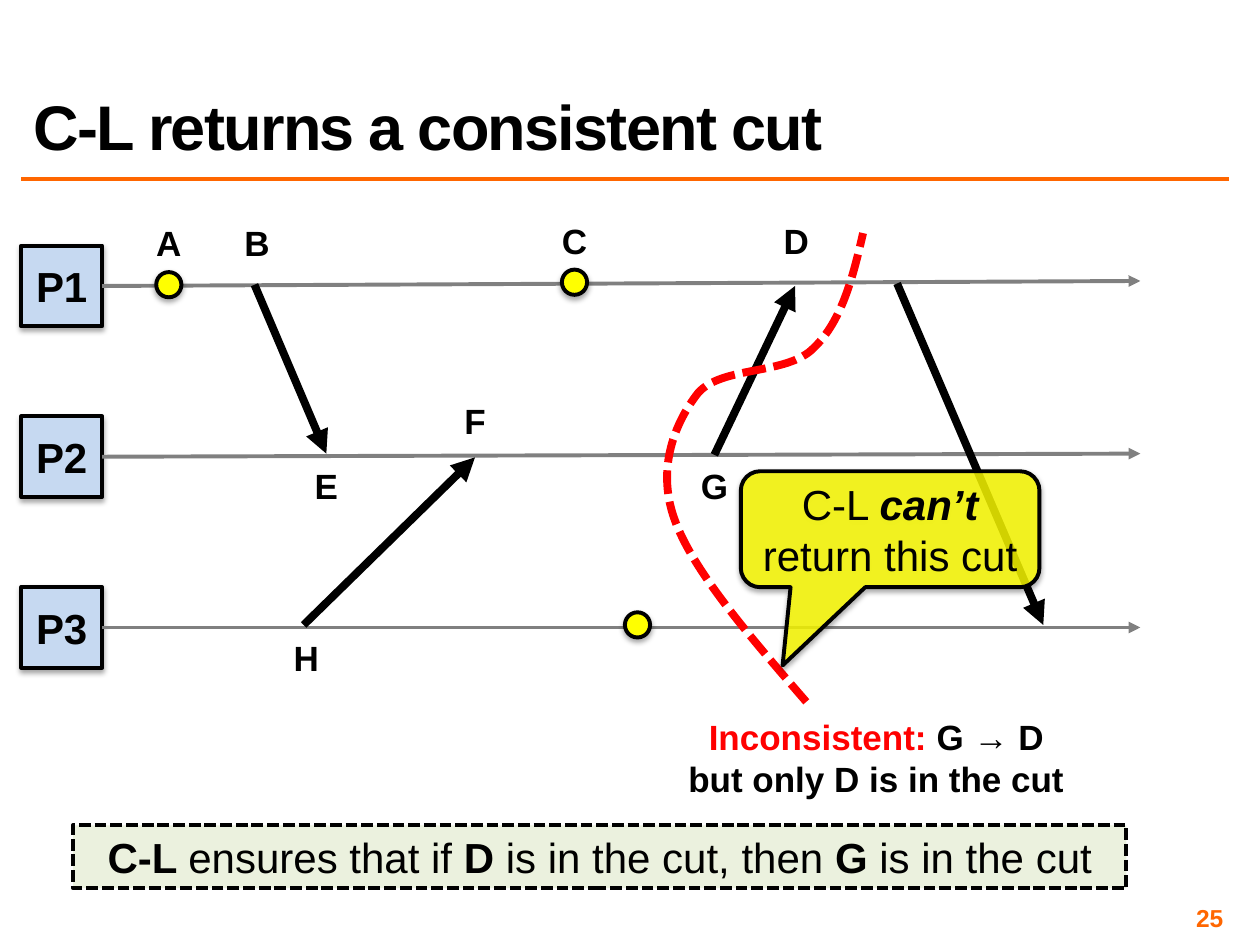
from dataclasses import dataclass

from lxml.etree import SubElement
from pptx import Presentation
from pptx.dml.color import RGBColor
from pptx.enum.dml import MSO_LINE
from pptx.enum.shapes import MSO_CONNECTOR, MSO_SHAPE
from pptx.enum.text import MSO_ANCHOR, PP_ALIGN
from pptx.oxml.ns import qn
from pptx.util import Inches, Pt


@dataclass(frozen=True)
class Theme:
    font: str = "Arial"
    ink: str = "000000"
    accent: str = "FF6600"
    alert: str = "FF0000"
    timeline: str = "808080"
    process: str = "C6D9F1"
    event: str = "FFFF00"
    summary: str = "EBF1DE"
    title_size: float = 36
    body_size: float = 24
    label_size: float = 20
    number_size: float = 14
    outline: float = 2.25
    heavy: float = 4.5
    rule: float = 2


THEME = Theme()
TITLE = "C-L returns a consistent cut"
PAGE_NUMBER = "25"
PROCESSES = [("P1", 2.23), ("P2", 3.6), ("P3", 4.98)]
PROCESS_LEFT, PROCESS_TOP, PROCESS_STEP, PROCESS_SIZE = 0.17, 1.95, 1.355, 0.64
TIMELINE_END = 9.05
EVENTS = [(1.34, 2.26), (4.56, 2.24), (5.06, 4.96)]
EVENT_SIZE = 0.2
MESSAGES = [
    ((2.02, 2.26), (2.59, 3.6)),
    ((2.41, 4.96), (3.77, 3.63)),
    ((5.67, 3.61), (6.31, 2.27)),
    ((7.12, 2.25), (8.28, 4.96)),
]
LABELS = [
    ("A", 1.34, 1.71), ("B", 2.04, 1.71), ("C", 4.56, 1.69), ("D", 6.32, 1.69),
    ("E", 2.59, 3.64), ("F", 3.77, 3.12), ("G", 5.67, 3.64), ("H", 2.43, 5),
]
LABEL_WIDTH, LABEL_HEIGHT = 0.41, 0.44
CUT_START = (6.4, 5.57)
CUT_CURVES = [
    [(5.95, 5.05), (5.49, 4.52), (5.35, 4.11)],
    [(5.21, 3.71), (5.36, 3.35), (5.54, 3.12)],
    [(5.73, 2.9), (6.25, 2.98), (6.46, 2.76)],
    [(6.68, 2.55), (6.77, 2.2), (6.85, 1.85)],
]
VERDICT = [("Inconsistent:", {"bold": True, "color": THEME.alert}),
           (" G → D but only D is in the cut", {"bold": True})]
CALLOUT = [("C-L ", {}), ("can’t", {"bold": True, "italic": True}), (" return this cut", {})]
SUMMARY = [("C-L ", {"bold": True}), ("ensures that if", {}), (" D ", {"bold": True}),
           ("is in the cut, then ", {}), ("G ", {"bold": True}), ("is in the cut", {})]


def write(shape, runs, size, align=PP_ALIGN.CENTER, anchor=MSO_ANCHOR.TOP, wrap=True):
    """Fill a shape with one paragraph of runs and return the paragraph."""
    frame = shape.text_frame
    frame.word_wrap = wrap
    frame.vertical_anchor = anchor
    para = frame.paragraphs[0]
    para.alignment = align
    for text, style in runs:
        span = para.add_run()
        span.text = text
        span.font.name = THEME.font
        span.font.size = Pt(size)
        span.font.bold = style.get("bold", False)
        span.font.italic = style.get("italic", False)
        span.font.color.rgb = RGBColor.from_string(style.get("color", THEME.ink))
    return para


def add_text(page, area, runs, size, **layout):
    """Add a text box and return it with its paragraph."""
    box = page.shapes.add_textbox(*map(Inches, area))
    return box, write(box, runs, size, **layout)


def add_box(page, kind, area, fill, shadow=True):
    """Add a filled, black-outlined shape with an optional soft shadow."""
    box = page.shapes.add_shape(kind, *map(Inches, area))
    box.fill.solid()
    box.fill.fore_color.rgb = RGBColor.from_string(fill)
    box.line.color.rgb = RGBColor.from_string(THEME.ink)
    box.line.width = Pt(THEME.outline)
    box.shadow.inherit = False
    if shadow:
        effects = box._element.spPr.find(qn("a:effectLst"))
        outer = SubElement(effects, qn("a:outerShdw"), blurRad=str(Pt(3.1)),
                           dist=str(Pt(1.8)), dir="5400000", rotWithShape="0")
        color = SubElement(outer, qn("a:srgbClr"), val=THEME.ink)
        SubElement(color, qn("a:alpha"), val="35000")
    return box


def add_line(page, start, end, color, width, arrow=True):
    """Add a straight line, by default with an arrowhead at its end."""
    line = page.shapes.add_connector(MSO_CONNECTOR.STRAIGHT, *map(Inches, (*start, *end)))
    line.line.color.rgb = RGBColor.from_string(color)
    line.line.width = Pt(width)
    if arrow:
        SubElement(line.line._get_or_add_ln(), qn("a:tailEnd"), type="triangle")
    SubElement(line._element.spPr, qn("a:effectLst"))
    return line


def add_cut(page):
    """Draw the dashed cut as a chain of cubic curves."""
    builder = page.shapes.build_freeform(*map(Inches, CUT_START))
    points = [point for curve in CUT_CURVES for point in curve]
    builder.add_line_segments([tuple(map(Inches, point)) for point in points], close=False)
    cut = builder.convert_to_shape()
    outline = cut._element.find(".//" + qn("a:path"))
    segments = outline.findall(qn("a:lnTo"))
    for index, segment in enumerate(segments):
        if index % 3 == 0:
            curve = SubElement(outline, qn("a:cubicBezTo"))
        curve.append(segment[0])
        outline.remove(segment)
    cut.fill.background()
    cut.line.color.rgb = RGBColor.from_string(THEME.alert)
    cut.line.width = Pt(THEME.heavy)
    cut.line.dash_style = MSO_LINE.SQUARE_DOT
    cut.shadow.inherit = False


def add_header(page):
    """Add the title, its rule and the page number."""
    add_line(page, (0.17, 1.42), (9.75, 1.42), THEME.accent, THEME.rule, arrow=False)
    number, _ = add_text(page, (7.42, 7.17, 2.33, 0.23),
                         [(PAGE_NUMBER, {"bold": True, "color": THEME.accent})],
                         THEME.number_size, align=PP_ALIGN.RIGHT, anchor=MSO_ANCHOR.MIDDLE)
    frame = number.text_frame
    frame.margin_left = frame.margin_right = Inches(0.04)
    frame.margin_top = frame.margin_bottom = Inches(0.04)
    _, para = add_text(page, (0.17, 0.17, 9.58, 1.17), [(TITLE, {"bold": True})],
                       THEME.title_size, align=PP_ALIGN.LEFT, anchor=MSO_ANCHOR.BOTTOM)
    para.line_spacing = 0.8
    para.runs[0].font._element.set("spc", "-100")


def add_diagram(page):
    """Add the processes, timelines, events, messages and event labels."""
    for row, (name, end) in enumerate(PROCESSES):
        top = PROCESS_TOP + row * PROCESS_STEP
        box = add_box(page, MSO_SHAPE.FLOWCHART_PROCESS,
                      (PROCESS_LEFT, top, PROCESS_SIZE, PROCESS_SIZE), THEME.process)
        write(box, [(name, {"bold": True})], THEME.body_size, anchor=MSO_ANCHOR.MIDDLE)
        start = (PROCESS_LEFT + PROCESS_SIZE, top + PROCESS_SIZE / 2)
        line = add_line(page, start, (TIMELINE_END, end), THEME.timeline, THEME.outline)
        line.begin_connect(box, 3)
    for x, y in EVENTS:
        area = (x - EVENT_SIZE / 2, y - EVENT_SIZE / 2, EVENT_SIZE, EVENT_SIZE)
        add_box(page, MSO_SHAPE.OVAL, area, THEME.event)
    for start, end in MESSAGES:
        add_line(page, start, end, THEME.ink, THEME.heavy)
    for name, center, top in LABELS:
        add_text(page, (center - LABEL_WIDTH / 2, top, LABEL_WIDTH, LABEL_HEIGHT),
                 [(name, {"bold": True})], THEME.label_size, wrap=False)


def add_conclusion(page):
    """Add the cut, its verdict, the callout and the summary."""
    add_cut(page)
    add_text(page, (5.29, 5.63, 3.33, 0.77), VERDICT, THEME.label_size)
    callout = add_box(page, MSO_SHAPE.ROUNDED_RECTANGULAR_CALLOUT,
                      (5.88, 3.74, 2.37, 0.92), THEME.event)
    callout.adjustments[0], callout.adjustments[1] = -0.36, 1.175
    color = callout._element.spPr.find(qn("a:solidFill"))[0]
    SubElement(color, qn("a:alpha"), val="82000")
    write(callout, CALLOUT, THEME.body_size, anchor=MSO_ANCHOR.MIDDLE)
    summary = add_box(page, MSO_SHAPE.RECTANGLE, (0.58, 6.55, 8.36, 0.5),
                      THEME.summary, shadow=False)
    summary.line.dash_style = MSO_LINE.SQUARE_DOT
    write(summary, SUMMARY, THEME.body_size)


def main():
    """Build the slide and save it."""
    deck = Presentation()
    deck.slide_width, deck.slide_height = Inches(10), Inches(7.5)
    page = deck.slides.add_slide(deck.slide_layouts[6])
    add_header(page)
    add_diagram(page)
    add_conclusion(page)
    deck.save("out.pptx")


if __name__ == "__main__":
    main()
